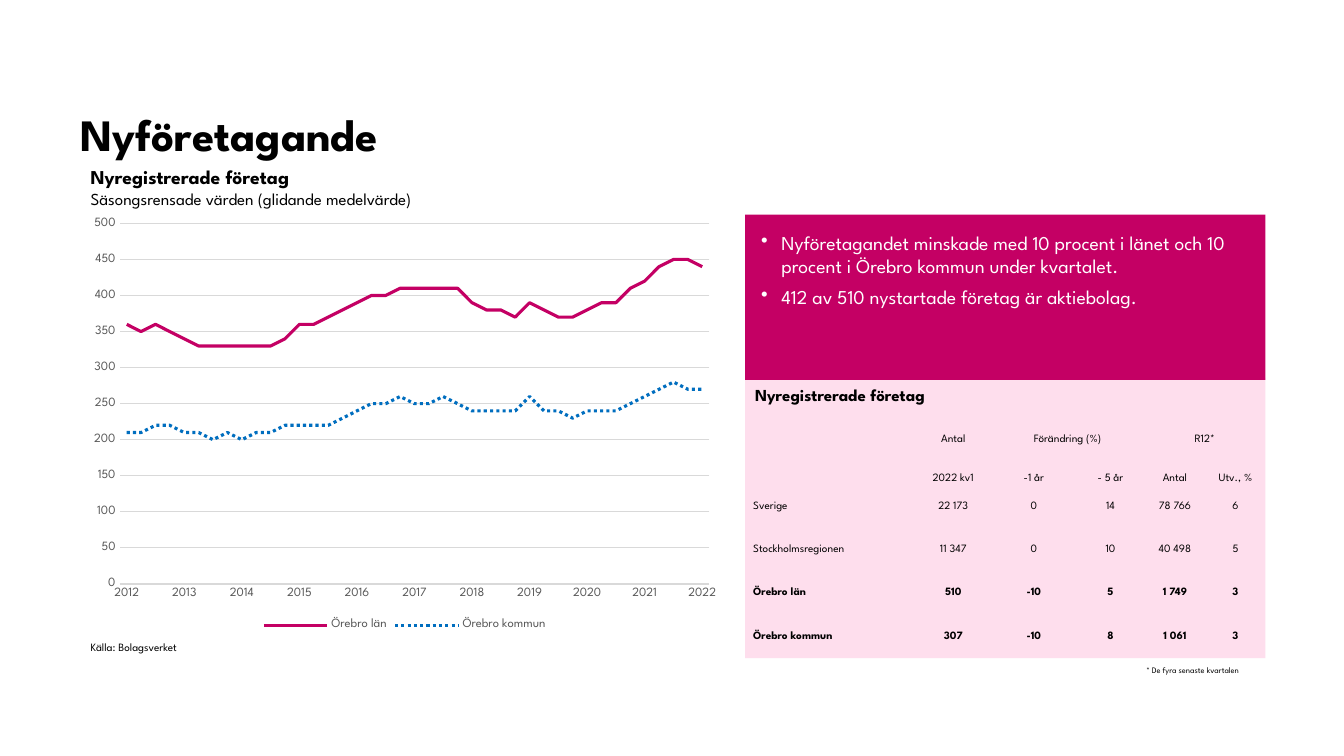
from lxml import etree
from pptx import Presentation
from pptx.chart.data import CategoryChartData
from pptx.dml.color import RGBColor
from pptx.enum.chart import XL_CHART_TYPE, XL_LEGEND_POSITION, XL_TICK_MARK
from pptx.enum.dml import MSO_LINE
from pptx.enum.shapes import MSO_SHAPE
from pptx.enum.text import MSO_ANCHOR, MSO_AUTO_SIZE, PP_ALIGN
from pptx.oxml import parse_xml
from pptx.oxml.ns import nsdecls, qn
from pptx.util import Inches, Pt

LINE = XL_CHART_TYPE.LINE
BELOW = XL_LEGEND_POSITION.BOTTOM
NO_TICK = XL_TICK_MARK.NONE
DOTS = MSO_LINE.ROUND_DOT
RECT = MSO_SHAPE.RECTANGLE
TOP, MIDDLE, BOTTOM = MSO_ANCHOR.TOP, MSO_ANCHOR.MIDDLE, MSO_ANCHOR.BOTTOM
GROW, FIXED = MSO_AUTO_SIZE.SHAPE_TO_FIT_TEXT, MSO_AUTO_SIZE.NONE
LEFT, CENTER = PP_ALIGN.LEFT, PP_ALIGN.CENTER

FONT = "League Spartan"
BLACK = RGBColor(0x00, 0x00, 0x00)
WHITE = RGBColor(0xFF, 0xFF, 0xFF)
PINK = RGBColor(0xFE, 0xDE, 0xED)
CERISE = RGBColor(0xC4, 0x00, 0x64)
BLUE = RGBColor(0x00, 0x6E, 0xBF)
GREY = RGBColor(0x59, 0x59, 0x59)
PALE = RGBColor(0xD9, 0xD9, 0xD9)
PLAIN_STYLE = "{2D5ABB26-0587-4C30-8999-92F81FD0307C}"

WIDTH, HEIGHT = Inches(13.33), Inches(7.5)
EDGE = 6                      # left margin, per cent of slide width
SIDE, SPAN = 55.44, 38.71     # right-hand panel, per cent of slide width

COLS = [32.75, 14.53, 16.47, 12.98, 11.82, 11.45]   # per cent of the table
ROWS = [14.6, 15.4] + [17.5] * 4
HEADS = 2
CELLS = [
    ["", "Antal", "Förändring (%)", "", "R12*", ""],
    ["", "2022 kv1", "-1 år", "- 5 år", "Antal", "Utv., %"],
    ["Sverige", "22 173", "0", "14", "78 766", "6"],
    ["Stockholmsregionen", "11 347", "0", "10", "40 498", "5"],
    ["Örebro län", "510", "-10", "5", "1 749", "3"],
    ["Örebro kommun", "307", "-10", "8", "1 061", "3"],
]
COUNTY = [360, 350, 360, 350, 340, 330, 330, 330, 330, 330, 330, 340, 360, 360,
          370, 380, 390, 400, 400, 410, 410, 410, 410, 410, 390, 380, 380, 370,
          390, 380, 370, 370, 380, 390, 390, 410, 420, 440, 450, 450, 440]
TOWN = [210, 210, 220, 220, 210, 210, 200, 210, 200, 210, 210, 220, 220, 220,
        220, 230, 240, 250, 250, 260, 250, 250, 260, 250, 240, 240, 240, 240,
        260, 240, 240, 230, 240, 240, 240, 250, 260, 270, 280, 270, 270]


def area(x, y, w, h):
    """Turn per cent of the slide into left, top, width and height."""
    return [int(side * share / 100) for side, share in
            zip((WIDTH, HEIGHT, WIDTH, HEIGHT), (x, y, w, h))]


def style(font, size, color=BLACK, bold=False):
    font.name, font.size, font.bold = FONT, Pt(size), bold
    font.color.rgb = color


def pad(frame, size):
    frame.margin_left = frame.margin_right = Inches(size)
    frame.margin_top = frame.margin_bottom = Inches(size)


def add_title(slide, text):
    title = slide.shapes.title
    title.left, title.top, title.width, title.height = area(EDGE, 4.93, 69.17, 16.27)
    frame = title.text_frame
    frame.text = text
    frame.auto_size = FIXED
    frame.vertical_anchor = BOTTOM
    pad(frame, 0)
    para = frame.paragraphs[0]
    para.alignment = LEFT
    style(para.runs[0].font, 32, bold=True)


def add_label(slide, spot, text, *looks):
    """Add a text box; each (size, bold) pair formats one line."""
    frame = slide.shapes.add_textbox(*area(*spot)).text_frame
    frame.text = text
    frame.word_wrap = False
    frame.auto_size = GROW
    for run, (size, bold) in zip(frame.paragraphs[0].runs, looks):
        style(run.font, size, bold=bold)


def add_panel(slide, spot, color):
    panel = slide.shapes.add_shape(RECT, *area(*spot))
    panel.shadow.inherit = False
    panel.fill.solid()
    panel.fill.fore_color.rgb = color
    panel.line.fill.background()
    return panel


def add_points(panel, points):
    frame = panel.text_frame
    frame.text = "\n".join(points)
    frame.word_wrap = True
    frame.vertical_anchor = TOP
    pad(frame, 0.16)
    for i, para in enumerate(frame.paragraphs):
        para.alignment = LEFT
        para.space_before = Pt(5 if i else 0)
        props = para._p.get_or_add_pPr()
        props.set("marL", str(Inches(0.2)))
        props.set("indent", str(-Inches(0.2)))
        etree.SubElement(props, qn("a:buChar")).set("char", "•")
        style(para.runs[0].font, 14, WHITE)


def fill_cell(cell, text, head, first, bold):
    cell.fill.background()
    pad(cell, 0.01)
    cell.vertical_anchor = BOTTOM if head else MIDDLE
    cell.text = text
    para = cell.text_frame.paragraphs[0]
    para.alignment = LEFT if first else CENTER
    if first:
        cell.margin_left = Inches(0.08)
    style(para.runs[0].font if text else para.font, 8, bold=bold)


def add_grid(slide, spot):
    left, top, width, height = area(*spot)
    table = slide.shapes.add_table(len(ROWS), len(COLS), left, top, width, height).table
    table.first_row = table.horz_banding = False
    table._tbl.tblPr.find(qn("a:tableStyleId")).text = PLAIN_STYLE
    for col, share in zip(table.columns, COLS):
        col.width = int(width * share / 100)
    for row, share in zip(table.rows, ROWS):
        row.height = int(height * share / 100)
    for r, line in enumerate(CELLS):
        for c, text in enumerate(line):
            fill_cell(table.cell(r, c), text, r < HEADS, c == 0, "Örebro" in line[0])
    for c in (2, 4):
        table.cell(0, c).merge(table.cell(0, c + 1))


def fix_plot(chart, x, y, w, h):
    """Set the inner plot area as shares of the chart."""
    plot = chart._chartSpace.chart.plotArea
    for old in plot.findall(qn("c:layout")):
        plot.remove(old)
    parts = "".join(f'<c:{tag} val="{val}"/>' for tag, val in (
        ("layoutTarget", "inner"), ("xMode", "edge"), ("yMode", "edge"),
        ("x", x), ("y", y), ("w", w), ("h", h)))
    plot.insert(0, parse_xml(
        f'<c:layout {nsdecls("c")}><c:manualLayout>{parts}</c:manualLayout></c:layout>'))


def add_graph(slide, spot):
    data = CategoryChartData()
    data.categories = ["" if i % 4 else str(2012 + i // 4) for i in range(len(COUNTY))]
    data.add_series("Örebro län", COUNTY)
    data.add_series("Örebro kommun", TOWN)
    chart = slide.shapes.add_chart(LINE, *area(*spot), data).chart
    style(chart.font, 10)
    chart.has_title = False
    chart.has_legend = True
    chart.legend.position = BELOW
    chart.legend.include_in_layout = False
    style(chart.legend.font, 9, GREY)
    chart.plots[0].vary_by_categories = False
    for series, color in zip(chart.plots[0].series, (CERISE, BLUE)):
        series.smooth = False
        series.format.line.color.rgb = color
        series.format.line.width = Pt(2.25)
    series.format.line.dash_style = DOTS
    years, count = chart.category_axis, chart.value_axis
    for axis in (years, count):
        axis.major_tick_mark = axis.minor_tick_mark = NO_TICK
        style(axis.tick_labels.font, 9, GREY)
    count.minimum_scale, count.maximum_scale, count.major_unit = 0, 500, 50
    count.format.line.fill.background()
    for line in (years.format.line, count.major_gridlines.format.line):
        line.color.rgb = PALE
        line.width = Pt(0.75)
    skip = parse_xml(f'<c:tickLblSkip {nsdecls("c")} val="4"/>')
    years._element.find(qn("c:noMultiLvlLbl")).addprevious(skip)
    fix_plot(chart, 0.06, 0.03, 0.91, 0.85)


def main():
    deck = Presentation()
    deck.slide_width, deck.slide_height = WIDTH, HEIGHT
    slide = deck.slides.add_slide(deck.slide_layouts[5])
    add_title(slide, "Nyföretagande")
    add_label(slide, (EDGE, 84, 9.45, 3.2), "Källa: Bolagsverket", (8, False))
    add_panel(slide, (SIDE, 50, SPAN, 37.07), PINK)
    add_points(add_panel(slide, (SIDE, 28.4, SPAN, 21.87), CERISE), [
        "Nyföretagandet minskade med 10 procent i länet och 10 procent "
        "i Örebro kommun under kvartalet.",
        "412 av 510 nystartade företag är aktiebolag."])
    add_label(slide, (SIDE, 50.27, 15.3, 4), "Nyregistrerade företag", (12, True))
    add_label(slide, (84.55, 87.33, 9.68, 2.67), "* De fyra senaste kvartalen", (6, False))
    add_label(slide, (EDGE, 21.2, 30.98, 7.2),
              "Nyregistrerade företag\vSäsongsrensade värden (glidande medelvärde)",
              (14, True), (12, False))
    add_grid(slide, (SIDE, 54.27, SPAN, 32.8))
    add_graph(slide, (EDGE, 27.87, 48.24, 56.13))
    deck.save("out.pptx")


if __name__ == "__main__":
    main()
